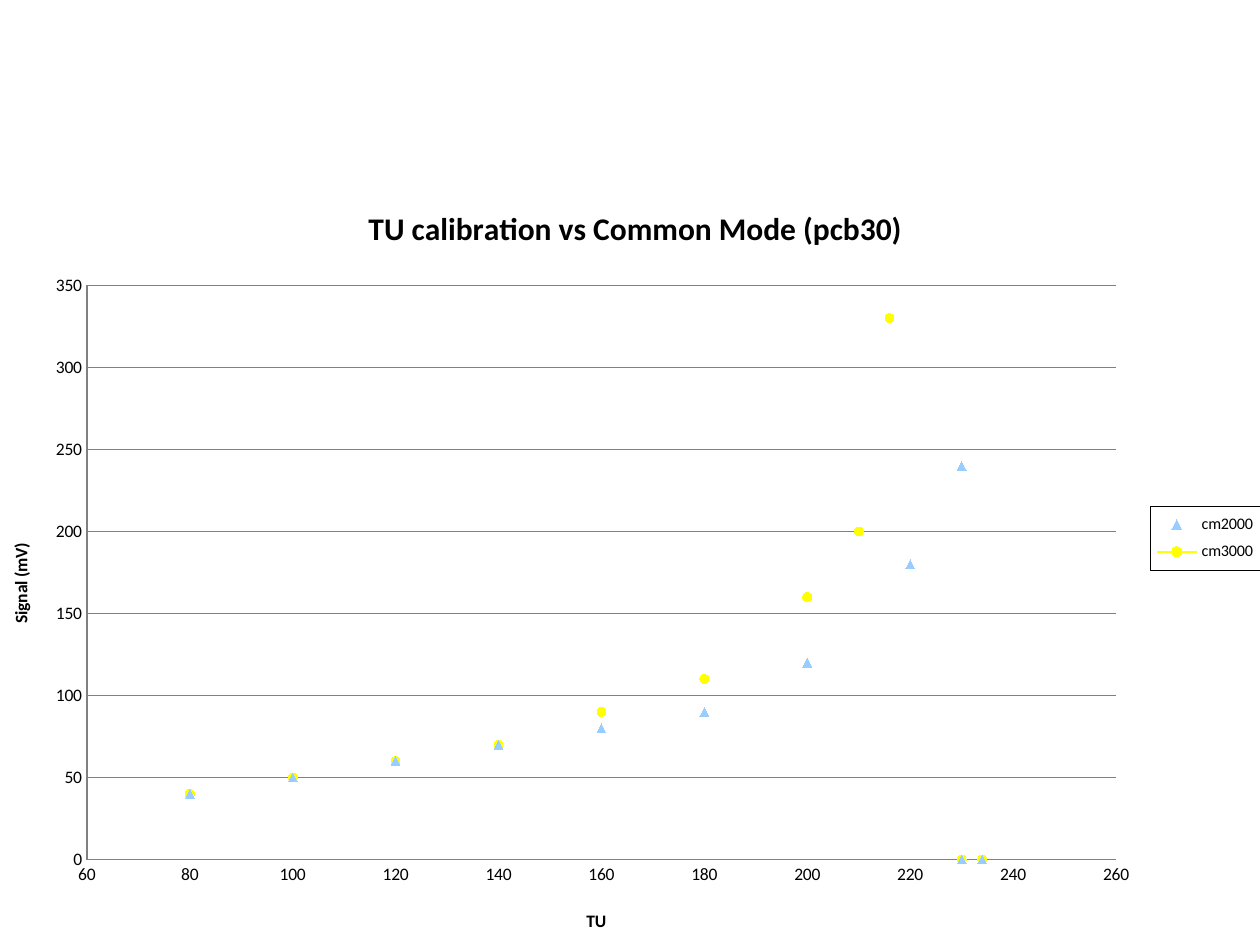
import pptx
import pptx.chart.data
import pptx.dml.color
import pptx.enum.chart
import pptx.oxml
import pptx.oxml.ns
import pptx.util
from pptx.util import Inches

BLACK = pptx.dml.color.RGBColor(0x00, 0x00, 0x00)
WHITE = pptx.dml.color.RGBColor(0xFF, 0xFF, 0xFF)
GRAY = pptx.dml.color.RGBColor(0x80, 0x80, 0x80)
LIGHT_BLUE = pptx.dml.color.RGBColor(0x99, 0xCC, 0xFF)
ORANGE = pptx.dml.color.RGBColor(0xFF, 0x99, 0x00)
YELLOW = pptx.dml.color.RGBColor(0xFF, 0xFF, 0x00)

# Pairs of TU and signal in mV
CM2000 = [(220, 180), (230, 240), (180, 90), (160, 80), (200, 120), (230, 0),
          (234, 0), (234, 0), (140, 70), (120, 60), (100, 50), (80, 40)]
CM3000 = [(216, 330), (210, 200), (180, 110), (160, 90), (200, 160), (230, 0),
          (234, 0), (140, 70), (120, 60), (100, 50), (80, 40)]


def format_font(font, size=10, bold=False, color=BLACK, name="Calibri"):
    font.name = name
    font.size = pptx.util.Pt(size)
    font.bold = bold
    font.color.rgb = color


def write_text(text_frame, text, **font_format):
    paragraph = text_frame.paragraphs[0]
    run = paragraph.add_run()
    run.text = text
    format_font(run.font, **font_format)


def place(element, after=None, target=None, **fractions):
    """Give a chart part a manual layout, in fractions of the chart."""
    for layout in element.findall(pptx.oxml.ns.qn("c:layout")):
        element.remove(layout)
    settings = [("layoutTarget", target)] if target else []
    settings += [(key + "Mode", "edge") for key in ("x", "y")]
    settings += list(fractions.items())
    body = "".join(f'<c:{key} val="{value}"/>' for key, value in settings)
    layout = pptx.oxml.parse_xml(
        f'<c:layout {pptx.oxml.ns.nsdecls("c")}>'
        f'<c:manualLayout>{body}</c:manualLayout></c:layout>')
    if after:
        element.find(pptx.oxml.ns.qn(after)).addnext(layout)
    else:
        element.insert(0, layout)


class ScatterSlide:
    def __init__(self, presentation):
        self.slide = presentation.slides.add_slide(presentation.slide_layouts[6])

    def add_chart(self, left, top, width, height, series_points):
        data = pptx.chart.data.XyChartData()
        for name, points in series_points.items():
            series = data.add_series(name)
            for tu, signal in points:
                series.add_data_point(tu, signal)
                series.add_data_point(None, None)  # gap: markers stay unjoined
        frame = self.slide.shapes.add_chart(
            pptx.enum.chart.XL_CHART_TYPE.XY_SCATTER,
            Inches(left), Inches(top), Inches(width), Inches(height), data)
        self.chart = frame.chart
        self.chart.plots[0].vary_by_categories = False
        format_font(self.chart.font)
        place(self.chart.element.xpath(".//c:plotArea")[0], target="inner",
              x=0.069, y=0.149, w=0.817, h=0.741)

    def add_title(self, owner, text, x, y, size=10):
        """Title the chart or one of its axes."""
        title = owner.chart_title if owner is self.chart else owner.axis_title
        write_text(title.text_frame, text, size=size, bold=True)
        place(title.element, after="c:tx", x=x, y=y)
        return title

    def style_axis(self, axis, minimum, maximum, step, gridlines):
        axis.minimum_scale = minimum
        axis.maximum_scale = maximum
        axis.major_unit = step
        axis.major_tick_mark = pptx.enum.chart.XL_TICK_MARK.NONE
        axis.minor_tick_mark = pptx.enum.chart.XL_TICK_MARK.NONE
        axis.has_major_gridlines = gridlines
        lines = [axis.format.line]
        if gridlines:
            lines.append(axis.major_gridlines.format.line)
        for line in lines:
            line.color.rgb = GRAY
            line.width = pptx.util.Pt(0.75)
        axis.tick_labels.number_format = "General"
        axis.tick_labels.number_format_is_linked = False
        format_font(axis.tick_labels.font)

    def style_series(self, series, marker_style, color, line_color=None):
        series.smooth = False
        if line_color is None:
            series.format.line.fill.background()
        else:
            series.format.line.color.rgb = line_color
            series.format.line.width = pptx.util.Pt(1)
        marker = series.marker
        marker.style = marker_style
        marker.size = 5
        marker.format.fill.solid()
        marker.format.fill.fore_color.rgb = color
        marker.format.line.color.rgb = color

    def add_legend(self, x, y, w, h):
        self.chart.has_legend = True
        legend = self.chart.legend
        legend.position = pptx.enum.chart.XL_LEGEND_POSITION.RIGHT
        legend.include_in_layout = False
        format_font(legend.font, size=9.2)
        element = self.chart.element.xpath(".//c:legend")[0]
        place(element, after="c:legendPos", x=x, y=y, w=w, h=h)
        box = pptx.oxml.parse_xml(
            f'<c:spPr {pptx.oxml.ns.nsdecls("c", "a")}>'
            f'<a:solidFill><a:srgbClr val="{WHITE}"/></a:solidFill>'
            f'<a:ln w="{pptx.util.Pt(0.25)}"><a:solidFill><a:srgbClr val="{BLACK}"/>'
            '</a:solidFill></a:ln></c:spPr>')
        element.find(pptx.oxml.ns.qn("c:overlay")).addnext(box)


def main():
    presentation = pptx.Presentation()
    presentation.slide_width = Inches(10)
    presentation.slide_height = Inches(7.5)

    page = ScatterSlide(presentation)
    page.add_chart(0, 1.35, 10, 6.15, {"cm2000": CM2000, "cm3000": CM3000})
    chart = page.chart
    tu_axis, signal_axis = chart.category_axis, chart.value_axis
    page.style_axis(tu_axis, 60, 260, 20, gridlines=False)
    page.style_axis(signal_axis, 0, 350, 50, gridlines=True)

    page.add_title(chart, "TU calibration vs Common Mode (pcb30)", 0.288, 0.04, size=18)
    page.add_title(tu_axis, "TU", 0.463, 0.95)
    signal_title = page.add_title(signal_axis, "Signal (mV)", 0.005, 0.477)
    signal_title.element.xpath(".//a:bodyPr")[0].set("rot", "-5400000")

    markers = pptx.enum.chart.XL_MARKER_STYLE
    cm2000, cm3000 = chart.plots[0].series
    page.style_series(cm2000, markers.TRIANGLE, LIGHT_BLUE)
    page.style_series(cm3000, markers.CIRCLE, ORANGE, line_color=YELLOW)
    page.add_legend(x=0.913, y=0.434, w=0.087, h=0.082)

    presentation.save("out.pptx")


if __name__ == "__main__":
    main()
